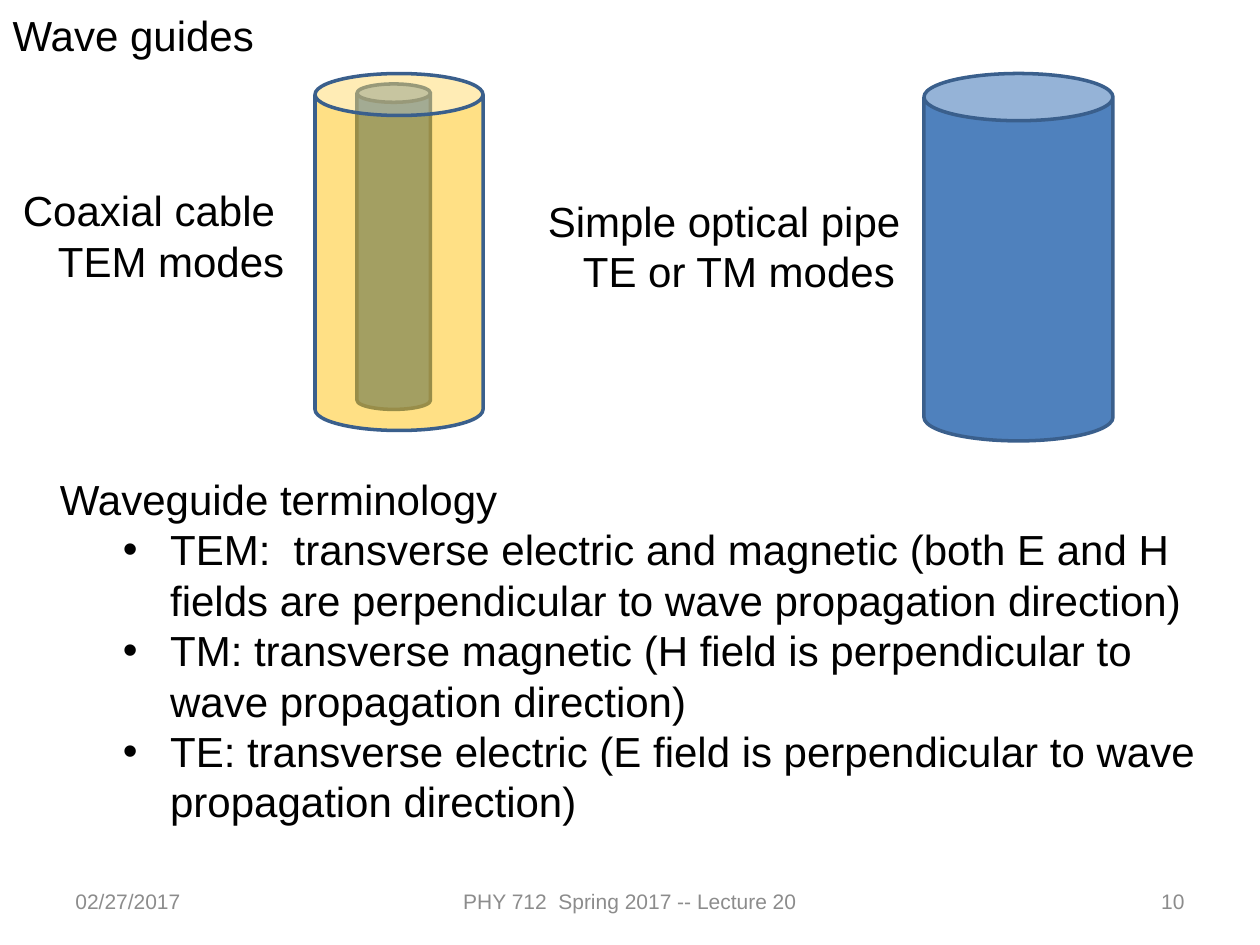
from dataclasses import dataclass

from lxml.etree import SubElement
from pptx import Presentation
from pptx.dml.color import RGBColor
from pptx.enum.shapes import MSO_SHAPE
from pptx.enum.text import MSO_ANCHOR, MSO_AUTO_SIZE, PP_ALIGN
from pptx.oxml.ns import qn
from pptx.util import Pt

BLACK = RGBColor(0x00, 0x00, 0x00)
GREY = RGBColor(0x8C, 0x8C, 0x8C)
BLUE = RGBColor(0x4F, 0x81, 0xBD)
NAVY = RGBColor(0x3A, 0x5F, 0x8C)
GOLD = RGBColor(0xFF, 0xC0, 0x00)
FONT = "Arial"


@dataclass(frozen=True)
class Box:
    left: float
    top: float
    width: float
    height: float

    def pts(self) -> tuple:
        return Pt(self.left), Pt(self.top), Pt(self.width), Pt(self.height)


@dataclass(frozen=True)
class Can:
    box: Box
    fill: RGBColor
    alpha: int = 100


@dataclass(frozen=True)
class Label:
    box: Box
    lines: tuple[str, ...]


@dataclass(frozen=True)
class Foot:
    box: Box
    text: str
    align: PP_ALIGN


TITLE = Box(0, 2, 456, 36)
BODY = Box(27, 267, 666, 211)
CANS = (
    Can(Box(204, 48, 42, 186), BLUE),
    Can(Box(180, 42, 96, 204), GOLD, 48),
    Can(Box(528, 42, 108, 210), BLUE),
)
LABELS = (
    Label(Box(6, 102, 186, 65.5), ("Coaxial cable", "TEM modes")),
    Label(Box(306, 108, 258, 65.5), ("Simple optical pipe", "TE or TM modes")),
)
FEET = (
    Foot(Box(36, 500.5, 168, 28.75), "02/27/2017", PP_ALIGN.LEFT),
    Foot(Box(246, 500.5, 228, 28.75), "PHY 712  Spring 2017 -- Lecture 20",
         PP_ALIGN.CENTER),
    Foot(Box(516, 500.5, 168, 28.75), "10", PP_ALIGN.RIGHT),
)
TERMS = (
    "TEM:  transverse electric and magnetic (both E and H fields are "
    "perpendicular to wave propagation direction)",
    "TM: transverse magnetic (H field is perpendicular to wave "
    "propagation direction)",
    "TE: transverse electric (E field is perpendicular to wave "
    "propagation direction)",
)


def indent(para, left: float, first: float = 0, mark: str = "") -> None:
    """Set the margins of a paragraph and its bullet, if any."""
    props = para._p.get_or_add_pPr()
    props.set("marL", str(Pt(left)))
    props.set("indent", str(Pt(first)))
    if mark:
        SubElement(props, qn("a:buFont")).set("typeface", FONT)
        SubElement(props, qn("a:buChar")).set("char", mark)
    else:
        SubElement(props, qn("a:buNone"))


def style(para, size: float = 24, color: RGBColor = BLACK,
          align: PP_ALIGN = PP_ALIGN.LEFT) -> None:
    para.alignment = align
    para.space_before = Pt(0)
    para.font.size = Pt(size)
    para.font.name = FONT
    para.font.color.rgb = color


def prep(frame, anchor: MSO_ANCHOR = MSO_ANCHOR.TOP) -> None:
    frame.word_wrap = True
    frame.auto_size = MSO_AUTO_SIZE.NONE
    frame.vertical_anchor = anchor


def place(shape, box: Box) -> None:
    shape.left, shape.top, shape.width, shape.height = box.pts()


def add_can(slide, can: Can) -> None:
    shape = slide.shapes.add_shape(MSO_SHAPE.CAN, *can.box.pts())
    shape.shadow.inherit = False
    shape.fill.solid()
    shape.fill.fore_color.rgb = can.fill
    if can.alpha < 100:
        tint = shape._element.spPr.find(qn("a:solidFill"))[0]
        SubElement(tint, qn("a:alpha")).set("val", str(can.alpha * 1000))
    shape.line.color.rgb = NAVY
    shape.line.width = Pt(2)


def add_label(slide, label: Label) -> None:
    frame = slide.shapes.add_textbox(*label.box.pts()).text_frame
    prep(frame)
    frame.text = "\n".join(label.lines)
    for rank, para in enumerate(frame.paragraphs):
        indent(para, 20 * rank)
        style(para)


def add_foot(slide, foot: Foot) -> None:
    frame = slide.shapes.add_textbox(*foot.box.pts()).text_frame
    prep(frame, MSO_ANCHOR.MIDDLE)
    frame.text = foot.text
    style(frame.paragraphs[0], 12, GREY, foot.align)


def fill_title(slide) -> None:
    title = slide.shapes.title
    place(title, TITLE)
    prep(title.text_frame)
    title.text_frame.text = "Wave guides"
    style(title.text_frame.paragraphs[0])


def fill_body(slide) -> None:
    body = slide.placeholders[1]
    place(body, BODY)
    frame = body.text_frame
    prep(frame)
    frame.text = "\n".join(("Waveguide terminology", *TERMS))
    head, *terms = frame.paragraphs
    indent(head, 0)
    style(head)
    for term in terms:
        term.level = 1
        indent(term, 63, -27, "•")
        style(term)


def main() -> None:
    deck = Presentation()
    deck.slide_width, deck.slide_height = Pt(720), Pt(540)
    slide = deck.slides.add_slide(deck.slide_layouts[1])
    fill_title(slide)
    fill_body(slide)
    for can in CANS:
        add_can(slide, can)
    for label in LABELS:
        add_label(slide, label)
    for foot in FEET:
        add_foot(slide, foot)
    deck.save("out.pptx")


if __name__ == "__main__":
    main()
